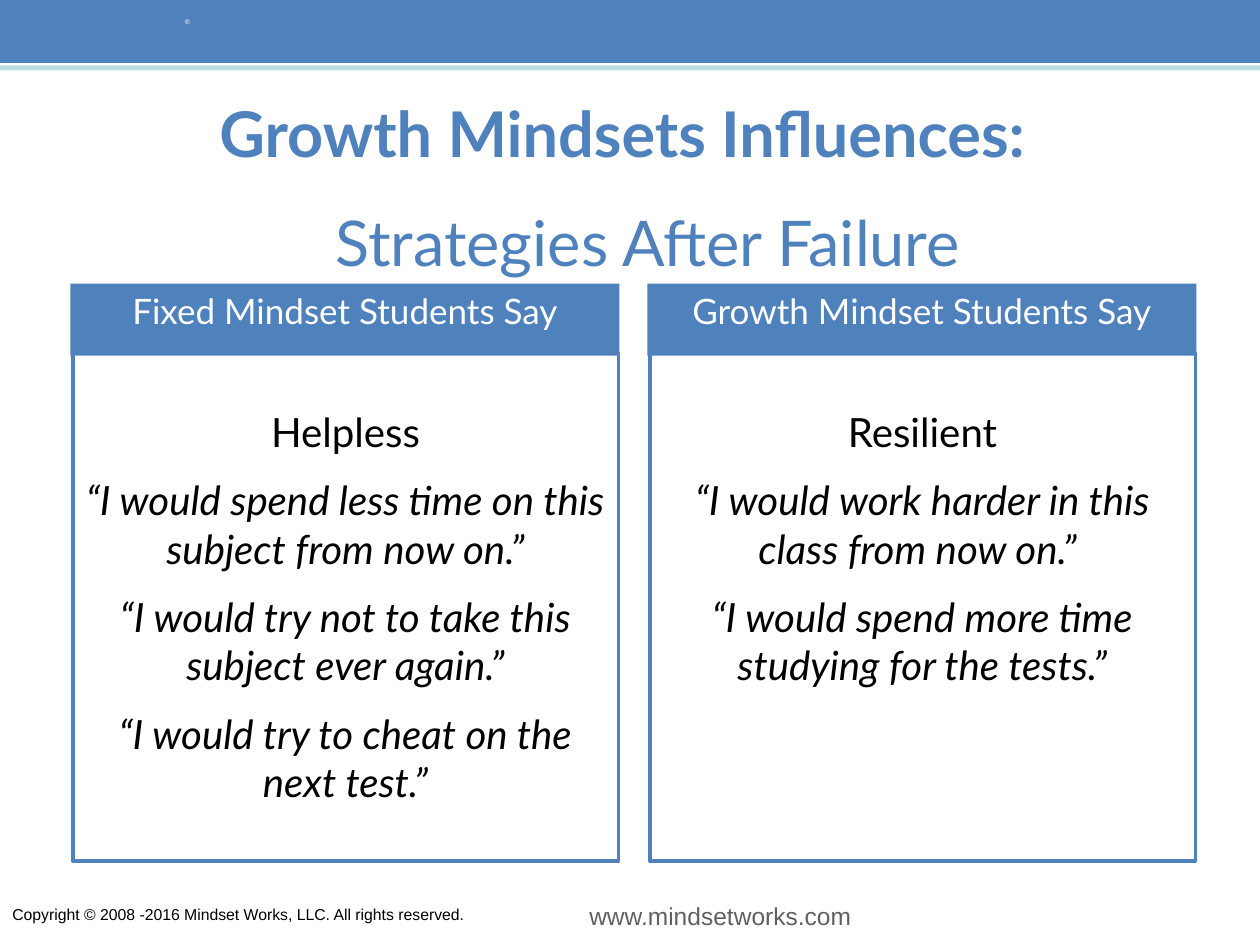
from pptx import Presentation
from pptx.dml.color import RGBColor
from pptx.enum.shapes import MSO_SHAPE as Shape
from pptx.enum.text import MSO_ANCHOR as Anchor, PP_ALIGN as Align
from pptx.util import Cm, Pt

BLUE = "4F81BD"
WHITE = "FFFFFF"
BLACK = "000000"

COLUMN_LEFT = 1.42
COLUMN_PITCH = 11.63
COLUMNS = [
    ("Fixed Mindset Students Say", "Helpless", [
        "“I would spend less time on this subject from now on.”",
        "“I would try not to take this subject ever again.”",
        "“I would try to cheat on the next test.”",
    ]),
    ("Growth Mindset Students Say", "Resilient", [
        "“I would work harder in this class from now on.” ",
        "“I would spend more time studying for the tests.”",
    ]),
]


def color(value):
    return RGBColor.from_string(value)


def write(paragraph, text, size, ink, font="Lato", bold=False, italic=False,
          align=Align.LEFT, before=0):
    paragraph.alignment = align
    paragraph.space_before = Pt(before)
    run = paragraph.add_run()
    run.text = text
    run.font.name = font
    run.font.size = Pt(size)
    run.font.bold = bold
    run.font.italic = italic
    run.font.color.rgb = color(ink)


def add_rectangle(slide, left, top, width, height, fill=None, line=None):
    rectangle = slide.shapes.add_shape(
        Shape.RECTANGLE, Cm(left), Cm(top), Cm(width), Cm(height))
    rectangle.shadow.inherit = False
    if fill:
        rectangle.fill.solid()
        rectangle.fill.fore_color.rgb = color(fill)
    else:
        rectangle.fill.background()
    if line:
        rectangle.line.color.rgb = color(line)
        rectangle.line.width = Pt(2)
    else:
        rectangle.line.fill.background()
    rectangle.text_frame.vertical_anchor = Anchor.TOP
    return rectangle


def add_label(slide, text, left, top, width, height, anchor=Anchor.TOP, **style):
    frame = slide.shapes.add_textbox(
        Cm(left), Cm(top), Cm(width), Cm(height)).text_frame
    frame.word_wrap = True
    frame.vertical_anchor = anchor
    write(frame.paragraphs[0], text, **style)


def add_column(slide, left, heading, attitude, quotes):
    header = add_rectangle(slide, left, 5.72, 11.07, 1.45, fill=BLUE)
    write(header.text_frame.paragraphs[0], heading, 20, WHITE, align=Align.CENTER)

    panel = add_rectangle(slide, left + 0.05, 7.11, 11, 10.25, line=BLUE).text_frame
    panel.margin_top = Cm(1.1)
    write(panel.paragraphs[0], attitude, 23, BLACK, align=Align.CENTER)
    for quote in quotes:
        write(panel.add_paragraph(), quote, 23, BLACK, italic=True,
              align=Align.CENTER, before=11.5)


def main():
    deck = Presentation()
    deck.slide_width, deck.slide_height = Cm(25.4), Cm(19.05)
    slide = deck.slides.add_slide(deck.slide_layouts[6])

    add_label(slide, "www.mindsetworks.com", 11.63, 18.03, 5.92, 0.86,
              size=14, ink="606060", font="Arial")
    add_rectangle(slide, 0, 0, 25.4, 1.27, fill=BLUE)
    add_rectangle(slide, 0, 1.32, 25.4, 0.1, fill="BBE0E3")
    add_label(slide, "Copyright © 2008 -2016 Mindset Works, LLC. All rights reserved.",
              0, 18.11, 10.36, 0.64, size=9, ink=BLACK, font="Arial")
    add_label(slide, "®", 3.48, 0.23, 0.64, 0.43, size=4, ink=WHITE, font="Arial")

    heading_style = dict(anchor=Anchor.MIDDLE, size=36, ink=BLUE, align=Align.CENTER)
    add_label(slide, "Growth Mindsets Influences: ", 1.27, 1.07, 22.86, 3.18,
              bold=True, **heading_style)
    add_label(slide, "Strategies After Failure", 1.63, 3.28, 22.86, 3.18,
              **heading_style)

    for index, column in enumerate(COLUMNS):
        add_column(slide, COLUMN_LEFT + index * COLUMN_PITCH, *column)

    deck.save("out.pptx")


if __name__ == "__main__":
    main()
